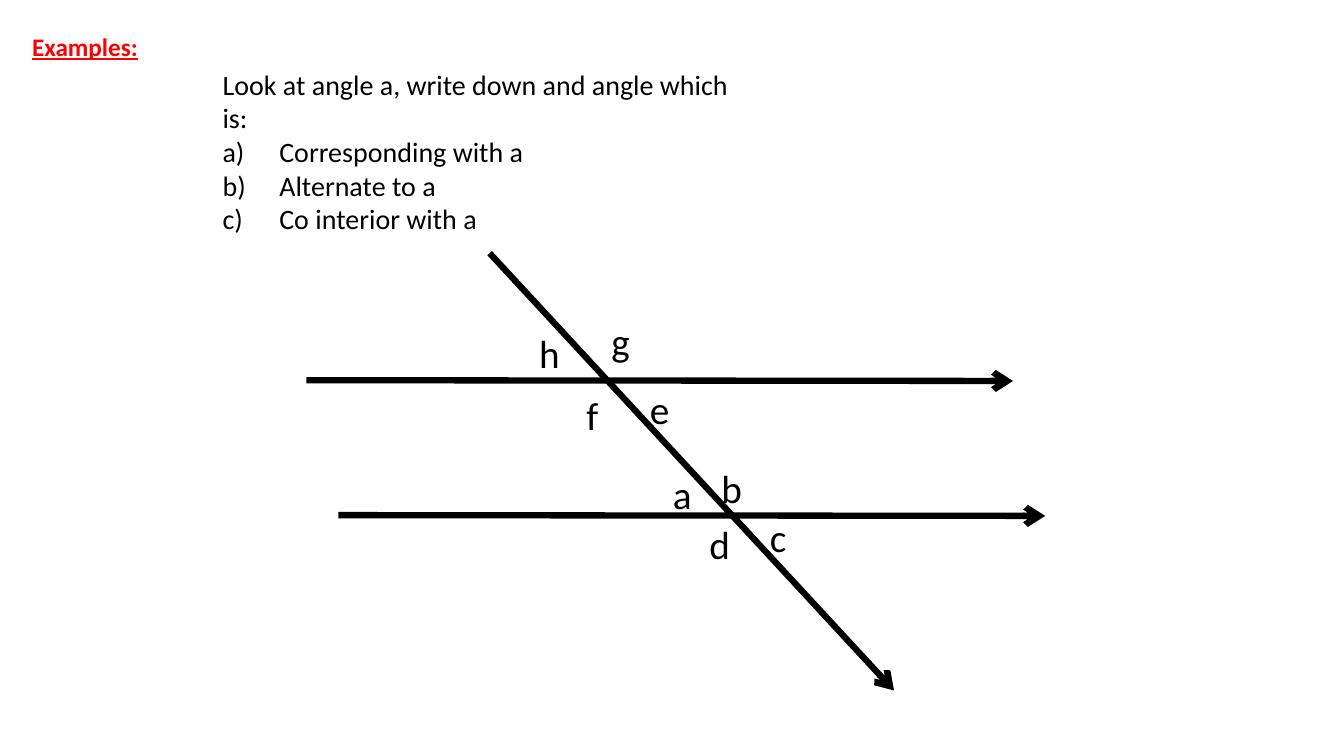
import pptx
import pptx.util
import pptx.dml.color
import pptx.enum.shapes
import pptx.enum.text
import pptx.oxml.ns
import lxml.etree

Cm = pptx.util.Cm
Pt = pptx.util.Pt
qn = pptx.oxml.ns.qn
COLOURS = {"ink": "000000", "heading": "FF0000"}

deck = pptx.Presentation()
deck.slide_width = Cm(33.87)
deck.slide_height = Cm(19.05)
page = deck.slides.add_slide(deck.slide_layouts[6])


def add_text(left, top, width, height, text, size, colour="ink", wrap=True):
    box = page.shapes.add_textbox(Cm(left), Cm(top), Cm(width), Cm(height))
    frame = box.text_frame
    frame.text = text
    frame.word_wrap = wrap
    frame.auto_size = pptx.enum.text.MSO_AUTO_SIZE.SHAPE_TO_FIT_TEXT
    for para in frame.paragraphs:
        for span in para.runs:
            span.font.name = "Calibri"
            span.font.size = Pt(size)
            span.font.color.rgb = pptx.dml.color.RGBColor.from_string(COLOURS[colour])
    return frame


lines = [
    (8.53, 12.98, 26.34, 13),
    (7.72, 9.58, 25.53, 9.6),
    (12.34, 6.38, 22.53, 17.4),
]
for ends in lines:
    arrow = page.shapes.add_connector(
        pptx.enum.shapes.MSO_CONNECTOR.STRAIGHT, *[Cm(end) for end in ends]
    )
    arrow.line.width = Pt(4.5)
    arrow.line.color.rgb = pptx.dml.color.RGBColor.from_string(COLOURS["ink"])
    outline = arrow.line._get_or_add_ln()
    lxml.etree.SubElement(outline, qn("a:tailEnd"), type="arrow")
    lxml.etree.SubElement(arrow._element.spPr, qn("a:effectLst"))

angles = {
    "a": (16.71, 11.73, 0.99),
    "h": (13.34, 8.18, 1.04),
    "g": (15.16, 7.87, 0.99),
    "f": (14.53, 9.73, 0.81),
    "e": (16.13, 9.58, 1.02),
    "d": (17.63, 12.98, 1.04),
    "c": (19.15, 12.8, 0.94),
    "b": (17.93, 11.58, 1.04),
}
for letter, (left, top, width) in angles.items():
    add_text(left, top, width, 1.45, letter, 28, wrap=False)

question = add_text(
    5.36, 1.57, 13.94, 3.68,
    "Look at angle a, write down and angle which is:\n"
    "Corresponding with a\nAlternate to a\nCo interior with a",
    20,
)
for para in question.paragraphs[1:]:
    properties = para._p.get_or_add_pPr()
    properties.set("marL", str(Cm(1.43)))
    properties.set("indent", str(-Cm(1.43)))
    lxml.etree.SubElement(properties, qn("a:buAutoNum"), type="alphaLcParenR")

heading = add_text(0.56, 0.66, 4.01, 1.02, "Examples:", 18, "heading")
heading_font = heading.paragraphs[0].runs[0].font
heading_font.bold = True
heading_font.underline = True

deck.save("out.pptx")
